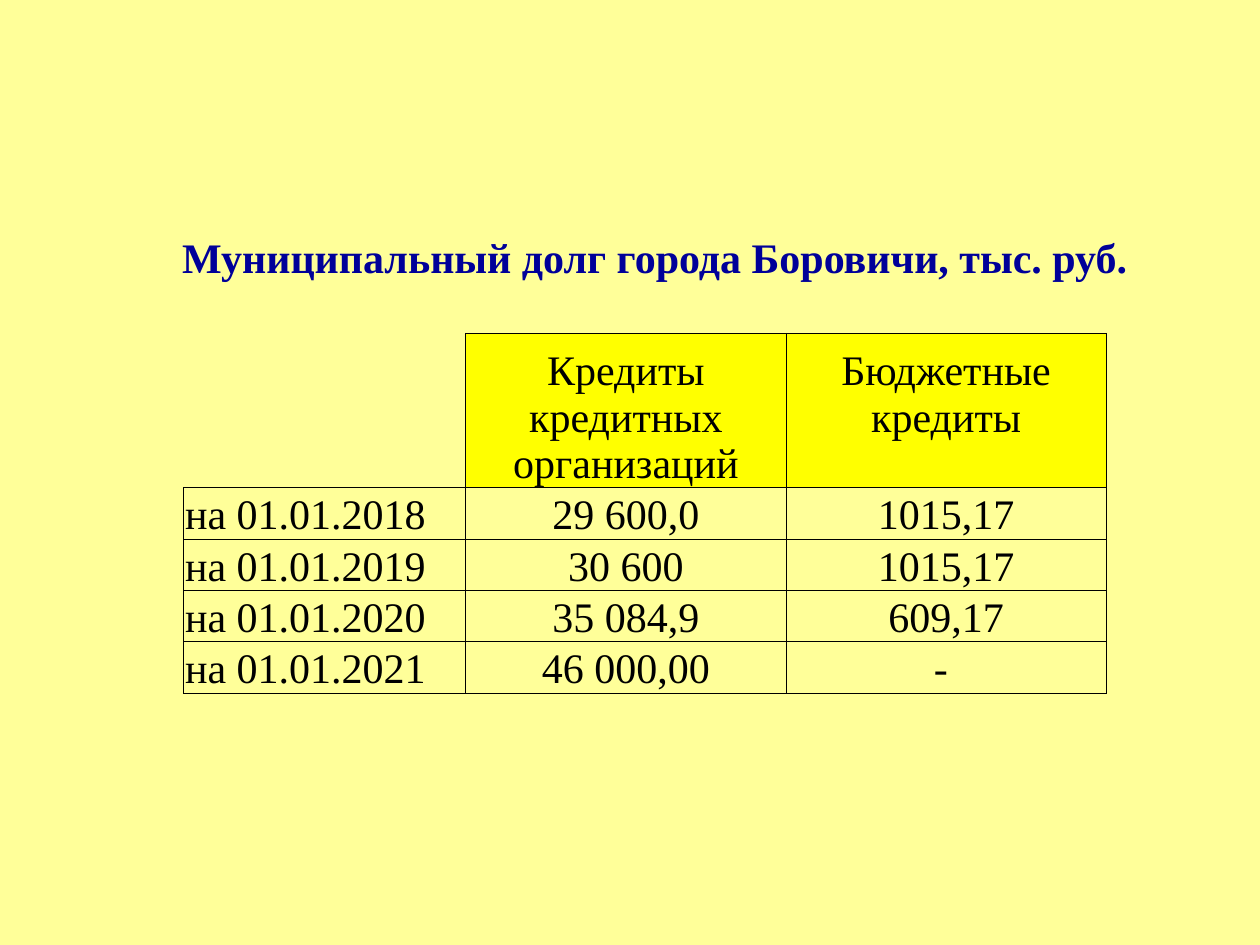
from lxml import etree
from pptx import Presentation
from pptx import util as u
from pptx.dml.color import RGBColor
from pptx.enum import text
from pptx.oxml.ns import qn

FONT = "Times New Roman"
HEADERS = ["", "Кредиты кредитных организаций", "Бюджетные кредиты"]
DEBT = [
    ["на 01.01.2018", "29 600,0", "1015,17"],
    ["на 01.01.2019", "30 600", "1015,17"],
    ["на 01.01.2020", "35 084,9", "609,17"],
    ["на 01.01.2021", "46 000,00", "- "],
]


def rgb(value):
    return RGBColor.from_string(value)


def format_paragraph(p, color, align, bold=False):
    p.alignment = align
    p.font.name, p.font.size, p.font.bold = FONT, u.Pt(24), bold
    p.font.color.rgb = rgb(color)


def set_borders(cell, sides, color="000000"):
    """Draw thin lines on the named sides and none on the others; call before filling."""
    tc_pr = cell._tc.get_or_add_tcPr()
    for side in "LRTB":
        ln = etree.SubElement(tc_pr, qn(f"a:ln{side}"), w=str(u.Pt(0.5)))
        if side in sides:
            fill = etree.SubElement(ln, qn("a:solidFill"))
            etree.SubElement(fill, qn("a:srgbClr"), val=color)
        else:
            etree.SubElement(ln, qn("a:noFill"))


def add_title(slide, left, top, width, height):
    title = slide.shapes.title
    title.left, title.top, title.width, title.height = left, top, width, height
    tf = title.text_frame
    tf.text = "Муниципальный долг города Боровичи, тыс. руб."
    tf.word_wrap = True
    tf.auto_size = text.MSO_AUTO_SIZE.NONE
    tf.vertical_anchor = text.MSO_ANCHOR.BOTTOM
    format_paragraph(tf.paragraphs[0], "000099", text.PP_ALIGN.CENTER, bold=True)


def fill_cell(cell, value, is_header, is_label):
    is_corner = is_header and is_label
    set_borders(cell, "RB" if is_corner else "LRTB")
    if is_header and not is_corner:
        cell.fill.solid()
        cell.fill.fore_color.rgb = rgb("FFFF00")
    else:
        cell.fill.background()
    cell.margin_left = cell.margin_right = u.Cm(0.03)
    cell.margin_top = u.Cm(0.3 if is_header else 0.03)
    cell.margin_bottom = 0
    cell.vertical_anchor = text.MSO_ANCHOR.TOP if is_header else text.MSO_ANCHOR.BOTTOM
    cell.text = value
    align = text.PP_ALIGN.LEFT if is_label else text.PP_ALIGN.CENTER
    format_paragraph(cell.text_frame.paragraphs[0], "000000", align)


def add_debt_table(slide, left, top, width, height):
    rows = [HEADERS] + DEBT
    table = slide.shapes.add_table(len(rows), len(HEADERS), left, top, width, height).table
    table.first_row = table.horz_banding = False

    label_width, header_height = u.Cm(5.69), u.Cm(3.08)
    for i, column in enumerate(table.columns):
        column.width = (width - label_width) // 2 if i else label_width
    for i, row in enumerate(table.rows):
        row.height = (height - header_height) // len(DEBT) if i else header_height

    for i, values in enumerate(rows):
        for j, value in enumerate(values):
            fill_cell(table.cell(i, j), value, is_header=i == 0, is_label=j == 0)


def main():
    prs = Presentation()
    prs.slide_width, prs.slide_height = u.Cm(25.4), u.Cm(19.05)
    slide = prs.slides.add_slide(prs.slide_layouts[5])
    background = slide.background.fill
    background.solid()
    background.fore_color.rgb = rgb("FFFF99")
    add_title(slide, u.Cm(2.9), u.Cm(4.52), u.Cm(20.6), u.Cm(1.3))
    add_debt_table(slide, u.Cm(3.7), u.Cm(6.72), u.Cm(18.6), u.Cm(7.22))
    prs.save("out.pptx")


if __name__ == "__main__":
    main()
